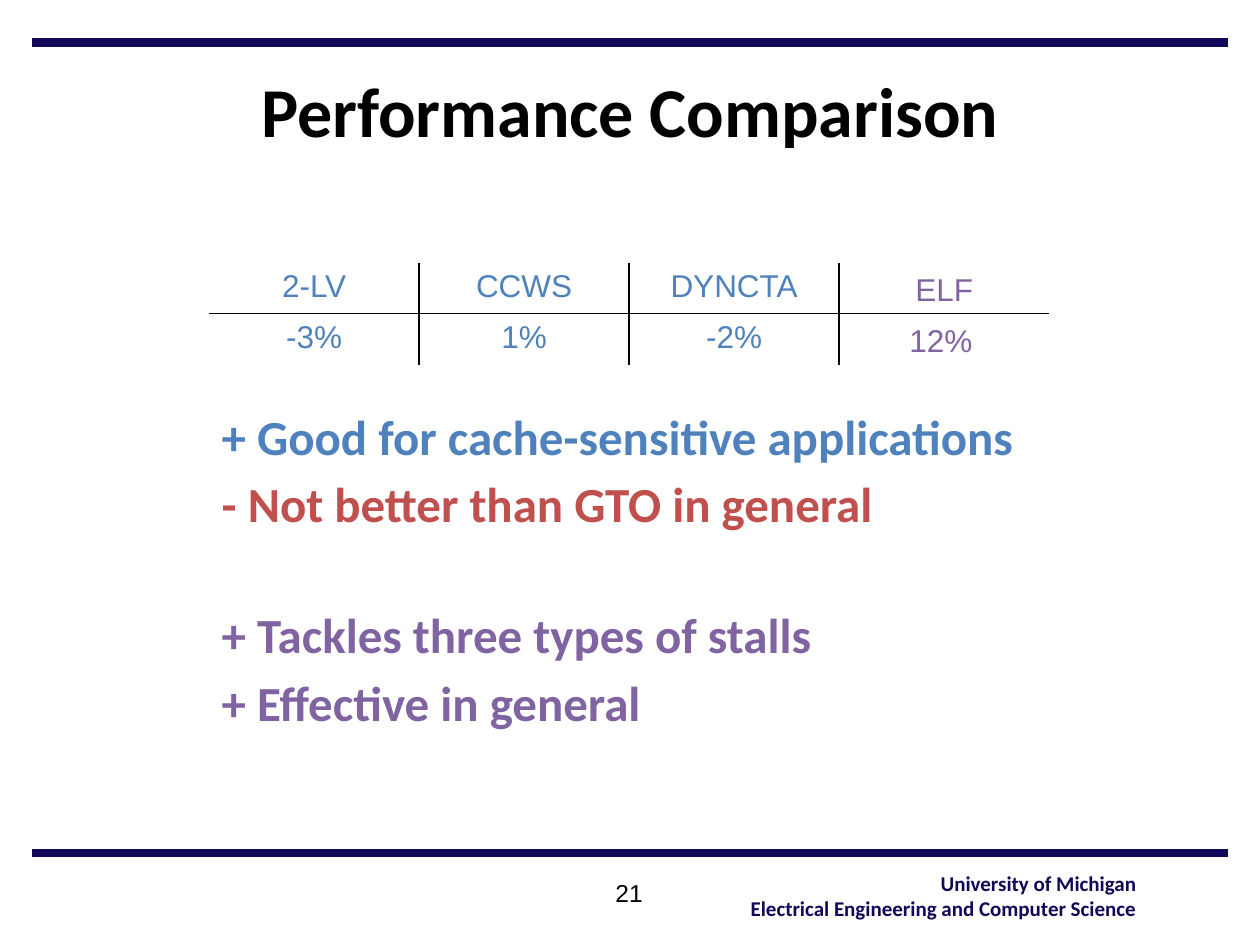
from lxml import etree
from pptx import Presentation
from pptx.dml.color import RGBColor
from pptx.enum import shapes, text
from pptx.oxml import ns
from pptx.util import Pt

NAVY, BLACK, BLUE, RED, PURPLE = "0F0958", "000000", "4F81BD", "C0504D", "8064A2"
LEFT, CENTER, RIGHT = text.PP_ALIGN.LEFT, text.PP_ALIGN.CENTER, text.PP_ALIGN.RIGHT


def color(value):
    return RGBColor.from_string(value)


def write(frame, *lines, size=18, font="Arial", colors=(BLACK,), bold=False,
          align=LEFT, gap=0, wrap=True, bullets_off=False):
    frame.word_wrap = wrap
    frame.auto_size = text.MSO_AUTO_SIZE.NONE
    for index, line in enumerate(lines):
        paragraph = frame.paragraphs[0] if index == 0 else frame.add_paragraph()
        if bullets_off:
            properties = paragraph._p.get_or_add_pPr()
            properties.set("marL", "0")
            properties.set("indent", "0")
            etree.SubElement(properties, ns.qn("a:buNone"))
        paragraph.text = line
        paragraph.alignment = align
        paragraph.space_before = Pt(gap if index else 0)
        paragraph.font.size = Pt(size)
        paragraph.font.name = font
        paragraph.font.bold = bold
        paragraph.font.color.rgb = color(colors[index % len(colors)])


presentation = Presentation()
presentation.slide_width, presentation.slide_height = Pt(720), Pt(540)
slide = presentation.slides.add_slide(presentation.slide_layouts.get_by_name("Two Content"))
title, upper_list, lower_list = list(slide.placeholders)[:3]

for y in (24.5, 487.5):
    rule = slide.shapes.add_connector(shapes.MSO_CONNECTOR.STRAIGHT, Pt(18), Pt(y), Pt(701.5), Pt(y))
    rule.line.color.rgb = color(NAVY)
    rule.line.width = Pt(5)
    etree.SubElement(rule._element.spPr, ns.qn("a:effectLst"))

title.left, title.top, title.width, title.height = Pt(54), Pt(30), Pt(612), Pt(65.5)
title.text_frame.vertical_anchor = text.MSO_ANCHOR.MIDDLE
write(title.text_frame, "Performance Comparison", size=40, font="Calibri", bold=True, align=CENTER)

columns = [("2-LV", "-3%"), ("CCWS", "1%"), ("DYNCTA", "-2%"), ("", "")]
table_frame = slide.shapes.add_table(2, 4, Pt(119.5), Pt(150), Pt(480), Pt(58.4))
table = table_frame.table
table.first_row = table.horz_banding = False
for row in table.rows:
    row.height = Pt(29.2)
for column_index, values in enumerate(columns):
    table.columns[column_index].width = Pt(120)
    for row_index, value in enumerate(values):
        cell = table.cell(row_index, column_index)
        write(cell.text_frame, value, colors=[BLUE], align=CENTER)
        edges = {"lnL": column_index > 0, "lnR": column_index < 3,
                 "lnT": row_index == 1, "lnB": row_index == 0}
        for edge, visible in edges.items():
            border = etree.SubElement(cell._tc.get_or_add_tcPr(), ns.qn(f"a:{edge}"), w=str(Pt(1)))
            fill = etree.SubElement(border, ns.qn("a:solidFill" if visible else "a:noFill"))
            if visible:
                etree.SubElement(fill, ns.qn("a:srgbClr"), val=BLACK)
        cell.fill.background()

for placeholder, top, lines, colors in [
    (upper_list, 228.5, ("+ Good for cache-sensitive applications",
                         "- Not better than GTO in general"), (BLUE, RED)),
    (lower_list, 342, ("+ Tackles three types of stalls", "+ Effective in general"), (PURPLE,)),
]:
    placeholder.left, placeholder.top = Pt(119.5), Pt(top)
    placeholder.width, placeholder.height = Pt(505), Pt(90)
    write(placeholder.text_frame, *lines, size=28, font="Calibri", colors=colors,
          bold=True, gap=5, bullets_off=True)

for left, top, width, height, lines, style in [
    (516, 151, 48, 29, ["ELF"], dict(colors=[PURPLE], wrap=False)),
    (512.5, 180, 51, 29, ["12%"], dict(colors=[PURPLE], wrap=False)),
    (284.5, 498, 150, 36, ["21"], dict(size=14, align=CENTER)),
    (419, 494, 237.5, 36, ["University of Michigan", "Electrical Engineering and Computer Science"],
     dict(size=12, font="Calibri", colors=[NAVY], bold=True, align=RIGHT, wrap=False)),
]:
    box = slide.shapes.add_textbox(Pt(left), Pt(top), Pt(width), Pt(height))
    write(box.text_frame, *lines, **style)

presentation.save("out.pptx")
